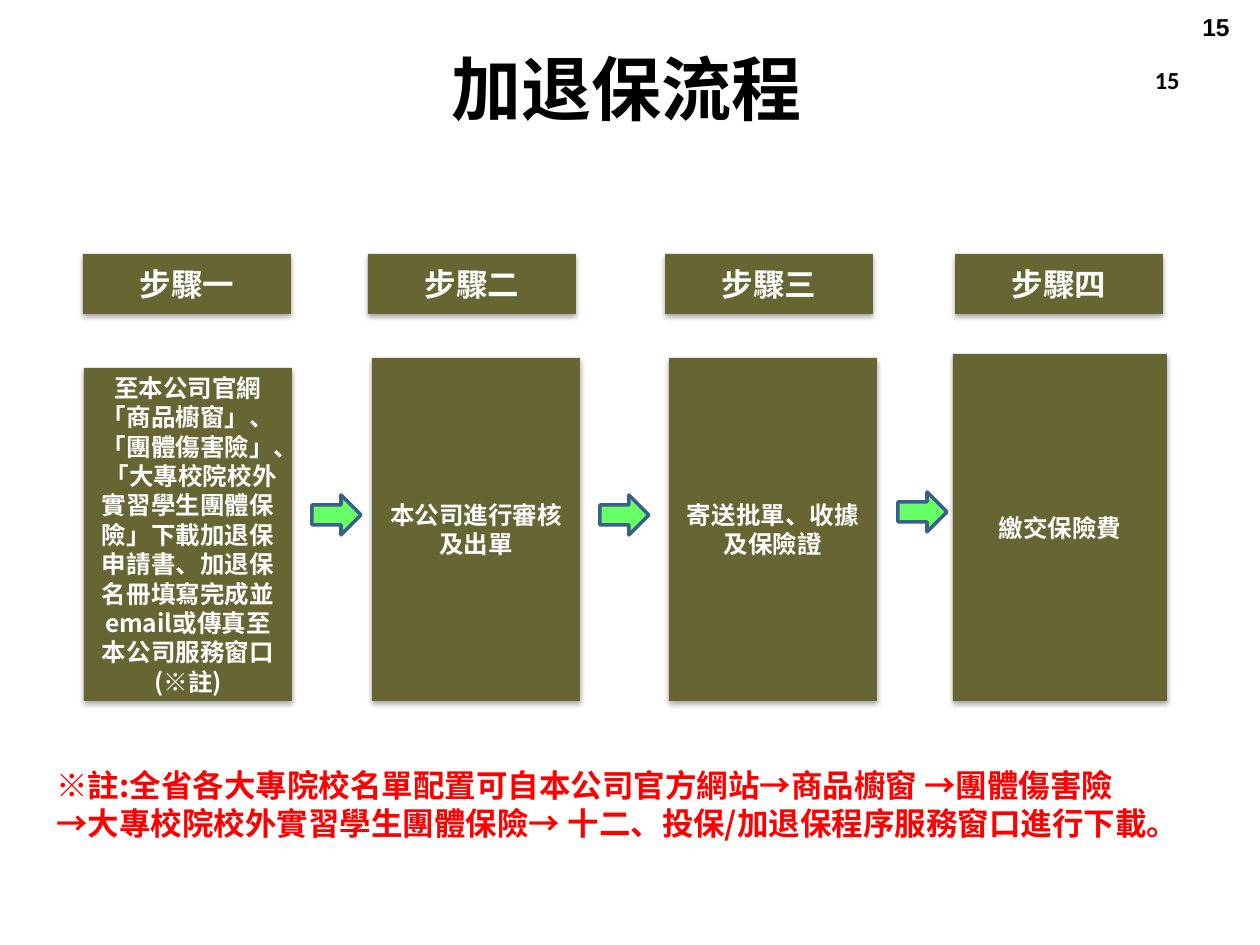
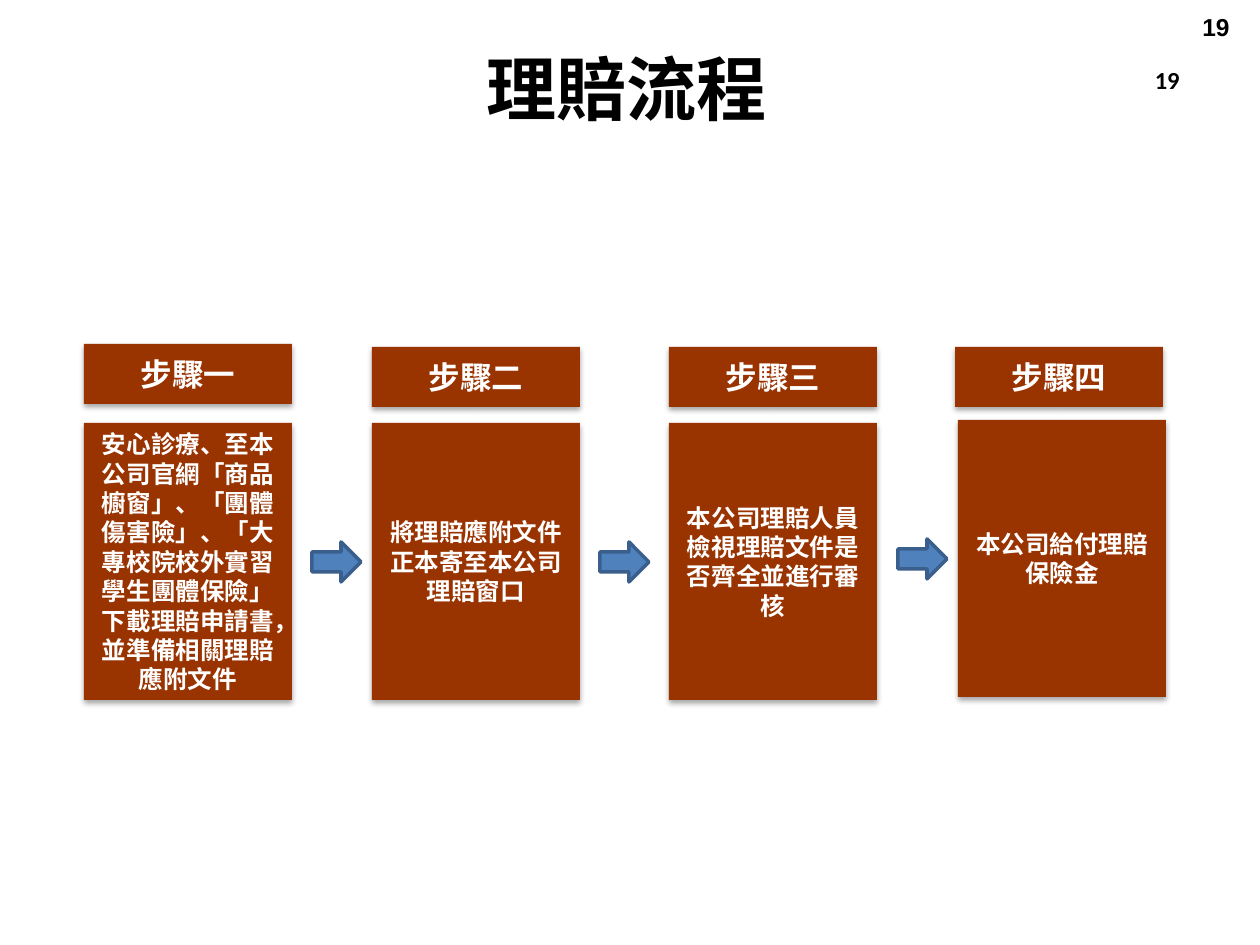
import pptx
import pptx.util
import pptx.dml.color
import pptx.enum.shapes
import pptx.enum.text
import pptx.oxml
import pptx.oxml.ns

PX = 914400 / 126
CJK = "Noto Sans CJK SC"
BLACK, WHITE, RED, EDGE = "000000", "FFFFFF", "FF0000", "3A5F8C"
KIND = pptx.enum.shapes.MSO_SHAPE
ALIGN = pptx.enum.text.PP_ALIGN
ANCHOR = pptx.enum.text.MSO_ANCHOR
FIT = pptx.enum.text.MSO_AUTO_SIZE
WIDE, HEAD = 208, 60
STEPS = ["步驟一", "步驟二", "步驟三", "步驟四"]
ARROWS = [312, 600, 898]
SHADOW = (
    '<a:effectLst %s><a:outerShdw blurRad="40000" dist="23000" dir="5400000" rotWithShape="0">'
    '<a:srgbClr val="000000"><a:alpha val="35000"/></a:srgbClr></a:outerShdw></a:effectLst>'
    % pptx.oxml.ns.nsdecls("a")
)


def emu(*sizes):
    return [pptx.util.Emu(round(size * PX)) for size in sizes]


def color(code):
    return pptx.dml.color.RGBColor.from_string(code)


def write(frame, lines, size, ink, align=ALIGN.CENTER, face=CJK):
    """Fill a text frame with one bold run per line."""
    for i, line in enumerate(lines):
        para = frame.add_paragraph() if i else frame.paragraphs[0]
        para.alignment = align
        run = para.add_run()
        run.text = line
        font = run.font
        font.name, font.size, font.bold = face, pptx.util.Pt(size), True
        font.color.rgb = color(ink)
        east = pptx.oxml.parse_xml('<a:ea %s typeface="%s"/>' % (pptx.oxml.ns.nsdecls("a"), face))
        font._element.find(pptx.oxml.ns.qn("a:latin")).addnext(east)


def label(slide, box, lines, size, ink, align, face=CJK):
    shape = slide.shapes.add_textbox(*emu(*box))
    shape.text_frame.word_wrap = True
    write(shape.text_frame, lines, size, ink, align, face)
    return shape


def card(slide, box, text, size, fill):
    shape = slide.shapes.add_shape(KIND.RECTANGLE, *emu(*box))
    shape.fill.solid()
    shape.fill.fore_color.rgb = color(fill)
    shape.line.fill.background()
    shape._element.spPr.append(pptx.oxml.parse_xml(SHADOW))
    frame = shape.text_frame
    frame.word_wrap, frame.vertical_anchor = True, ANCHOR.MIDDLE
    write(frame, [text], size, WHITE)


def arrow(slide, box, fill):
    shape = slide.shapes.add_shape(KIND.RIGHT_ARROW, *emu(*box))
    shape.shadow.inherit = False
    shape.fill.solid()
    shape.fill.fore_color.rgb = color(fill)
    shape.line.color.rgb = color(EDGE)
    shape.line.width = pptx.util.Pt(2)


def start(deck, title, page):
    """Add a slide with its title and both page numbers."""
    slide = deck.slides.add_slide(deck.slide_layouts[5])
    label(slide, (898, 59, 294, 66), [page], 14, BLACK, ALIGN.RIGHT, "Calibri")
    label(slide, (948, 6, 294, 66), [page], 14, BLACK, ALIGN.RIGHT, "Arial")
    shape = slide.shapes.title
    shape.left, shape.top, shape.width, shape.height = emu(437, 39, 379, 97)
    frame = shape.text_frame
    frame.word_wrap, frame.auto_size = False, FIT.NONE
    frame.vertical_anchor = ANCHOR.TOP
    write(frame, [title], 40, BLACK)
    return slide


def flow(slide, heads, cards, arrows, fill, tint):
    """Draw four steps: heads are (x, y), cards (x, y, w, h, text), arrows tops."""
    for x, y, w, h, text in cards:
        card(slide, (x, y, w, h), text, 14, fill)
    for x, y in zip(ARROWS, arrows):
        arrow(slide, (x, y, 49, 40), tint)
    for (x, y), step in zip(heads, STEPS):
        card(slide, (x, y, WIDE, HEAD), step, 18, fill)


def enrol(deck):
    slide = start(deck, "加退保流程", "15")
    heads = [(x, 254) for x in (83, 368, 665, 955)]
    cards = [
        (84, 368, WIDE, 333, "至本公司官網「商品櫥窗」、 「團體傷害險」、 「大專校院校外實習學生團體保險」"
         "下載加退保申請書、加退保名冊填寫完成並email或傳真至本公司服務窗口(※註)"),
        (372, 358, WIDE, 343, "本公司進行審核及出單"),
        (669, 358, WIDE, 343, "寄送批單、收據及保險證"),
        (953, 354, 214, 347, "繳交保險費"),
    ]
    flow(slide, heads, cards, (495, 495, 492), "666633", "66FF66")
    note = label(slide, (44, 760, 1160, 89), [
        "※註:全省各大專院校名單配置可自本公司官方網站→商品櫥窗 →團體傷害險",
        "→大專校院校外實習學生團體保險→ 十二、投保/加退保程序服務窗口進行下載。",
    ], 18, RED, ALIGN.LEFT)
    note.text_frame.auto_size = FIT.SHAPE_TO_FIT_TEXT


def claim(deck):
    slide = start(deck, "理賠流程", "19")
    heads = [(84, 344), (372, 347), (669, 347), (955, 347)]
    cards = [
        (84, 423, WIDE, 277, "安心診療、至本公司官網「商品櫥窗」、「團體傷害險」、"
         "「大專校院校外實習學生團體保險」下載理賠申請書，並準備相關理賠應附文件"),
        (372, 423, WIDE, 277, "將理賠應附文件正本寄至本公司理賠窗口"),
        (669, 423, WIDE, 277, "本公司理賠人員檢視理賠文件是否齊全並進行審核"),
        (958, 420, WIDE, 277, "本公司給付理賠保險金"),
    ]
    flow(slide, heads, cards, (542, 542, 539), "993300", "4F81BD")


def main():
    deck = pptx.Presentation()
    deck.slide_width, deck.slide_height = emu(1260, 945)
    enrol(deck)
    claim(deck)
    deck.save("out.pptx")


if __name__ == "__main__":
    main()
